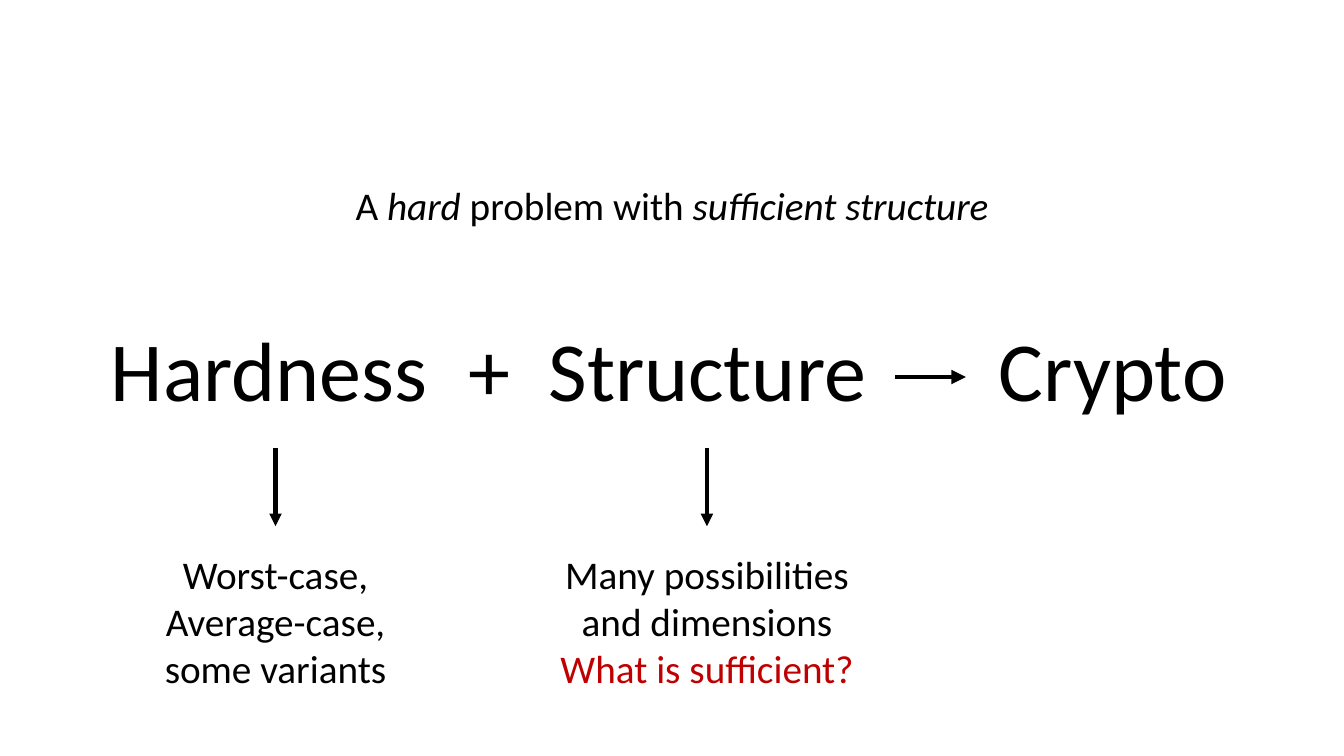
from lxml import etree
from pptx import Presentation
from pptx import util as u
from pptx.dml.color import RGBColor
from pptx.enum import shapes, text
from pptx.oxml.ns import qn

BLACK = RGBColor(0x00, 0x00, 0x00)
RED = RGBColor(0xC0, 0x00, 0x00)


class SlideWriter:
    font = "Calibri"
    body_size = 28
    title_size = 60

    def __init__(self, deck):
        self.deck = deck
        self.page = deck.slides.add_slide(deck.slide_layouts[6])

    def across(self, percent):
        return u.Emu(round(self.deck.slide_width * percent / 100))

    def down(self, percent):
        return u.Emu(round(self.deck.slide_height * percent / 100))

    def style(self, span, size, color=BLACK, italic=False):
        span.font.name = self.font
        span.font.size = u.Pt(size)
        span.font.color.rgb = color
        span.font.italic = italic

    def frame(self, left, top, width, height, wrap=True):
        box = self.page.shapes.add_textbox(
            self.across(left), self.down(top), self.across(width), self.down(height))
        box.text_frame.word_wrap = wrap
        return box.text_frame

    def equation(self, left, top, width, height, words, stops):
        frame = self.frame(left, top, width, height)
        frame.vertical_anchor = text.MSO_ANCHOR.MIDDLE
        para = frame.paragraphs[0]
        para.text = "\t".join(words)
        para.alignment = text.PP_ALIGN.LEFT
        para.line_spacing = 0.9
        tabs = etree.SubElement(para._p.get_or_add_pPr(), qn("a:tabLst"))
        for stop in stops:
            etree.SubElement(tabs, qn("a:tab"), pos=str(self.across(stop)), algn="ctr")
        self.style(para.runs[0], self.title_size)

    def phrase(self, left, top, width, height, pieces):
        para = self.frame(left, top, width, height).paragraphs[0]
        para.alignment = text.PP_ALIGN.CENTER
        for words, italic in pieces:
            span = para.add_run()
            span.text = words
            self.style(span, self.body_size, italic=italic)

    def detail(self, centre, top, width, height, lines):
        frame = self.frame(centre - width / 2, top, width, height, wrap=False)
        frame.text = "\n".join(words for words, color in lines)
        for para, (words, color) in zip(frame.paragraphs, lines):
            para.alignment = text.PP_ALIGN.CENTER
            self.style(para.runs[0], self.body_size, color)

    def arrow(self, start, end, weight):
        line = self.page.shapes.add_connector(
            shapes.MSO_CONNECTOR.STRAIGHT,
            self.across(start[0]), self.down(start[1]),
            self.across(end[0]), self.down(end[1]))
        line.line.color.rgb = BLACK
        line.line.width = u.Pt(weight)
        properties = line._element.spPr
        etree.SubElement(properties.find(qn("a:ln")), qn("a:tailEnd"), type="triangle")
        etree.SubElement(properties, qn("a:effectLst"))


def main():
    deck = Presentation()
    deck.slide_width = u.Inches(13.33)
    deck.slide_height = u.Inches(7.5)
    writer = SlideWriter(deck)

    writer.equation(7.5, 39.87, 87, 19.33,
                    ["Hardness", "+", "Structure", "Crypto"], [28.2, 44.4, 74.55])
    writer.arrow((66.6, 49.87), (71.87, 49.87), 3.5)

    columns = [
        (20.5, 18.4, [("Worst-case,", BLACK), ("Average-case,", BLACK),
                      ("some variants", BLACK)]),
        (52.6, 23.6, [("Many possibilities", BLACK), ("and dimensions", BLACK),
                      ("What is sufficient?", RED)]),
    ]
    for centre, width, lines in columns:
        writer.arrow((centre, 59.2), (centre, 69.6), 3)
        writer.detail(centre, 72.13, width, 20.13, lines)

    writer.phrase(17.93, 23.33, 64.14, 7.6,
                  [("A ", False), ("hard", True), (" problem with ", False),
                   ("sufficient structure", True)])
    deck.save("out.pptx")


if __name__ == "__main__":
    main()
